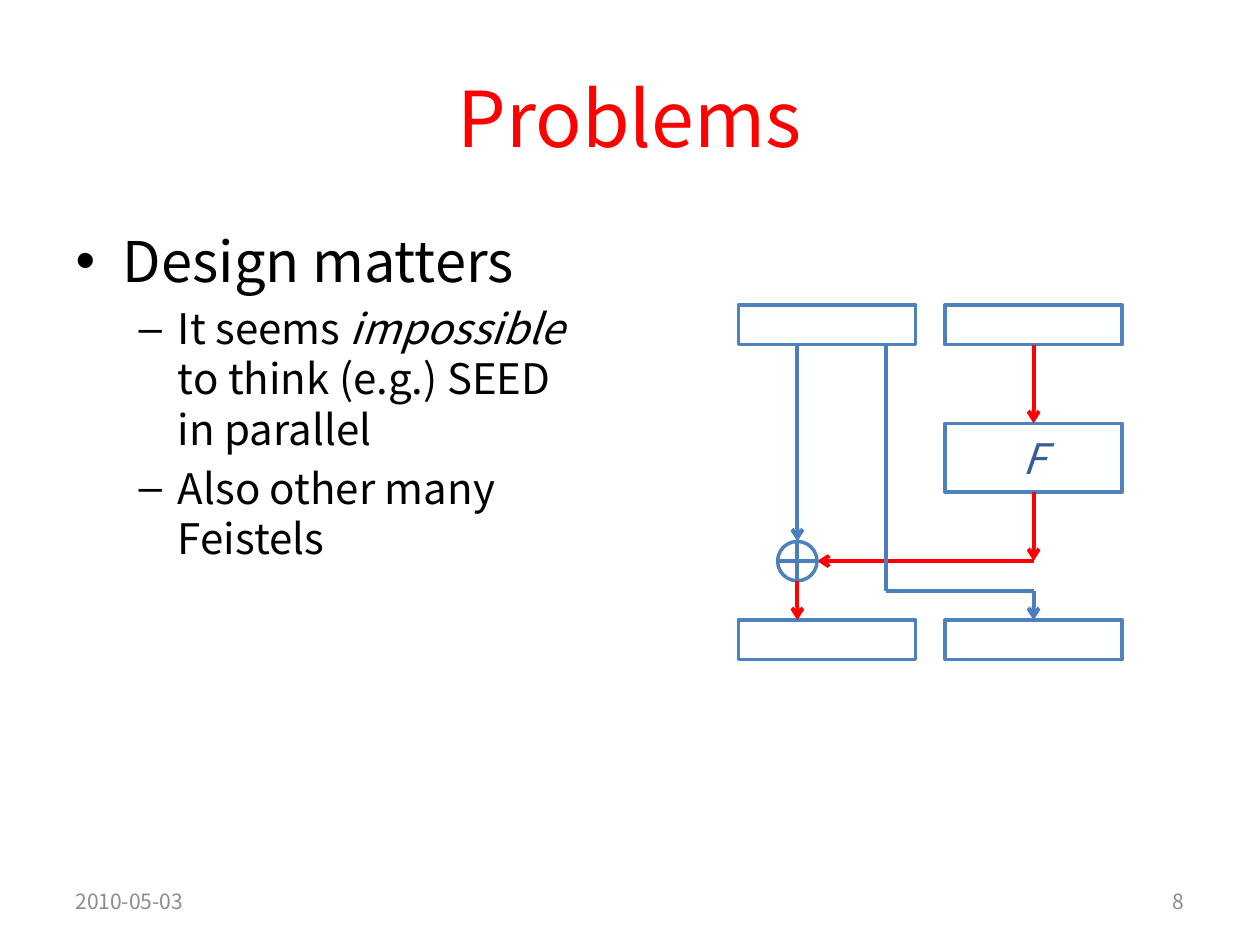
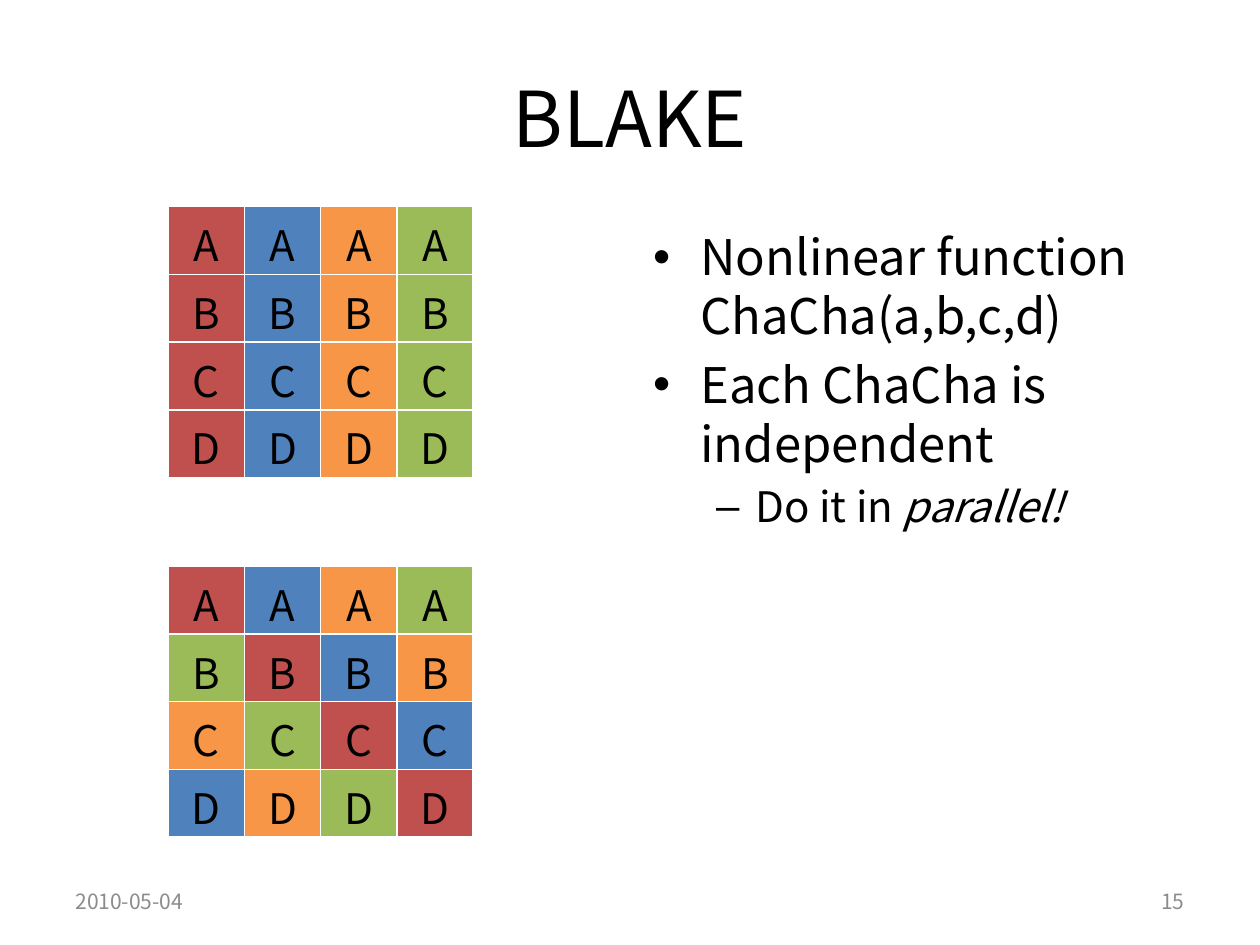
import lxml.etree
import pptx
import pptx.dml.color
import pptx.enum.shapes
import pptx.enum.text
import pptx.oxml.ns
import pptx.util

Pt = pptx.util.Pt
qn = pptx.oxml.ns.qn
ALIGN = pptx.enum.text.PP_ALIGN
MIDDLE = pptx.enum.text.MSO_ANCHOR.MIDDLE
SHAPE = pptx.enum.shapes.MSO_SHAPE
STRAIGHT = pptx.enum.shapes.MSO_CONNECTOR.STRAIGHT

FONT = "Noto Sans CJK KR"
BLACK, WHITE, RED, GREY = "000000", "FFFFFF", "FF0000", "8C8C8C"
BLUE, LINE_BLUE, DARK_BLUE = "4F81BD", "4B7EBC", "376092"
WORD_COLOURS = ["C0504D", BLUE, "F79646", "9BBB59"]

TITLE_BOX = (36, 21.6, 648, 90)
LEFT_BODY = (36, 126, 318, 356.4)
RIGHT_BODY = (366, 126, 318, 356.4)
DATE_BOX = (36, 500.5, 168, 28.8)
NUMBER_BOX = (516, 500.5, 168, 28.8)


def rgb(value):
    return pptx.dml.color.RGBColor.from_string(value)


def place(shape, box):
    for name, value in zip(("left", "top", "width", "height"), box):
        setattr(shape, name, Pt(value))


def add_text(p, text, size, colour=BLACK, italic=None):
    """Append text to a paragraph, with a line break at each newline."""
    for i, line in enumerate(text.split("\n")):
        if i:
            p.add_line_break()
        if line:
            r = p.add_run()
            r.text = line
            style = {"name": FONT, "size": Pt(size), "italic": italic}
            for name, value in style.items():
                setattr(r.font, name, value)
            r.font.color.rgb = rgb(colour)


def add_title(s, text, colour):
    place(s.shapes.title, TITLE_BOX)
    p = s.shapes.title.text_frame.paragraphs[0]
    p.alignment = ALIGN.CENTER
    add_text(p, text, 44, colour)


def add_body(s, idx, box, items):
    """Fill content placeholder idx with (level, size, runs) items; remove the other one."""
    for sp in list(s.placeholders):
        if sp.placeholder_format.idx not in (0, idx):
            sp.element.getparent().remove(sp.element)
    body = s.placeholders[idx]
    place(body, box)
    tf = body.text_frame
    for i, (level, size, runs) in enumerate(items):
        p = tf.add_paragraph() if i else tf.paragraphs[0]
        p.level = level
        for text, italic in runs:
            add_text(p, text, size, italic=italic)


def add_footer(s, date, number):
    for box, text, align in ((DATE_BOX, date, ALIGN.LEFT), (NUMBER_BOX, number, ALIGN.RIGHT)):
        tf = s.shapes.add_textbox(*map(Pt, box)).text_frame
        tf.word_wrap = True
        tf.vertical_anchor = MIDDLE
        tf.paragraphs[0].alignment = align
        add_text(tf.paragraphs[0], text, 12, GREY)


def add_slide(prs, title, colour, date, number):
    s = prs.slides.add_slide(prs.slide_layouts[3])
    add_title(s, title, colour)
    add_footer(s, date, number)
    return s


def add_feistel_round(s, left, top, unit):
    """Draw one Feistel round on a grid of the given unit."""

    def x(n):
        return Pt(left + n * unit)

    def y(n):
        return Pt(top + n * unit)

    def block(kind, col, row, width, height, fill=WHITE):
        sp = s.shapes.add_shape(kind, x(col), y(row), Pt(width * unit), Pt(height * unit))
        sp.shadow.inherit = False
        if fill:
            sp.fill.solid()
            sp.fill.fore_color.rgb = rgb(fill)
        else:
            sp.fill.background()
        sp.line.color.rgb = rgb(BLUE)
        sp.line.width = Pt(2)
        return sp

    def wire(start, end, colour=LINE_BLUE, arrow=True, source=None, target=None):
        """Run a line from start to end, joined to the blocks whose side middles it meets."""
        c = s.shapes.add_connector(STRAIGHT, x(start[0]), y(start[1]), x(end[0]), y(end[1]))
        if source is not None:
            c.begin_connect(source, 2)
        if target is not None:
            c.end_connect(target, 0)
        c.line.color.rgb = rgb(colour)
        c.line.width = Pt(2.25)
        if arrow:
            lxml.etree.SubElement(c.line._get_or_add_ln(), qn("a:tailEnd"), type="arrow")
        lxml.etree.SubElement(c.element.spPr, qn("a:effectLst"))

    col_left, col_right, width = 0, 5.25, 4.5
    mid_right = col_right + width / 2
    xor_x, xor_y, radius = 1.5, 6.5, 0.5
    bypass_x, bypass_y = 3.75, 7.25
    f_top, f_height, out_top = 3, 1.75, 8

    block(SHAPE.RECTANGLE, col_left, 0, width, 1)
    in_right = block(SHAPE.RECTANGLE, col_right, 0, width, 1)
    block(SHAPE.RECTANGLE, col_left, out_top, width, 1)
    out_right = block(SHAPE.RECTANGLE, col_right, out_top, width, 1)
    f = block(SHAPE.RECTANGLE, col_right, f_top, width, f_height)
    tf = f.text_frame
    for name in ("margin_top", "margin_bottom"):
        setattr(tf, name, 0)
    tf.vertical_anchor = MIDDLE
    tf.paragraphs[0].alignment = ALIGN.CENTER
    add_text(tf.paragraphs[0], "F", 24, DARK_BLUE, True)

    wire((xor_x, 1), (xor_x, xor_y - radius))
    wire((mid_right, 1), (mid_right, f_top), RED, source=in_right, target=f)
    wire((mid_right, xor_y), (xor_x + radius, xor_y), RED)
    wire((mid_right, f_top + f_height), (mid_right, xor_y), RED, source=f)

    block(SHAPE.OVAL, xor_x - radius, xor_y - radius, 2 * radius, 2 * radius, None)
    wire((xor_x + radius, xor_y), (xor_x - radius, xor_y), arrow=False)
    wire((xor_x, xor_y - radius), (xor_x, xor_y + radius), arrow=False)
    wire((xor_x, xor_y + radius), (xor_x, out_top), RED)

    wire((bypass_x, 1), (bypass_x, bypass_y), arrow=False)
    wire((mid_right, bypass_y), (bypass_x, bypass_y), arrow=False)
    wire((mid_right, bypass_y), (mid_right, out_top), target=out_right)


def add_cell_borders(cell, colour, width):
    tcPr = cell._tc.get_or_add_tcPr()
    for side in ("lnL", "lnR", "lnT", "lnB"):
        ln = lxml.etree.SubElement(tcPr, qn("a:" + side), w=str(Pt(width)))
        fill = lxml.etree.SubElement(ln, qn("a:solidFill"))
        lxml.etree.SubElement(fill, qn("a:srgbClr"), val=colour)


def add_state_table(s, box, shift):
    """Draw the 4 x 4 state; each row's colours move right by shift from the row above."""
    letters = "ABCD"
    size = len(letters)
    table = s.shapes.add_table(size, size, *map(Pt, box)).table
    table.first_row = table.horz_banding = False
    for i, letter in enumerate(letters):
        for j in range(size):
            cell = table.cell(i, j)
            add_cell_borders(cell, WHITE, 1)
            cell.fill.solid()
            cell.fill.fore_color.rgb = rgb(WORD_COLOURS[(j - i * shift) % size])
            p = cell.text_frame.paragraphs[0]
            p.alignment = ALIGN.CENTER
            add_text(p, letter, 24)


def build_problems(prs):
    s = add_slide(prs, "Problems", RED, "2010-05-03", "8")
    add_body(s, 1, LEFT_BODY, [
        (0, 32, [("Design matters", None)]),
        (1, 24, [("It seems ", None), ("impossible\n", True),
                 ("to think (e.g.) SEED\nin parallel", None)]),
        (1, 24, [("Also other many Feistels", None)]),
    ])
    add_feistel_round(s, 421.9, 174.4, 22.5)


def build_blake(prs):
    s = add_slide(prs, "BLAKE", BLACK, "2010-05-04", "15")
    add_body(s, 2, RIGHT_BODY, [
        (0, 28, [("Nonlinear function\nChaCha(a,b,c,d)", None)]),
        (0, 28, [("Each ChaCha is\nindependent", None)]),
        (1, 24, [("Do it in ", None), ("parallel!", True)]),
    ])
    for top, shift in ((118.1, 0), (323.6, 1)):
        add_state_table(s, (96, top, 174.4, 154.8), shift)


def main():
    prs = pptx.Presentation()
    prs.slide_width, prs.slide_height = Pt(720), Pt(540)
    build_problems(prs)
    build_blake(prs)
    prs.save("out.pptx")


if __name__ == "__main__":
    main()
